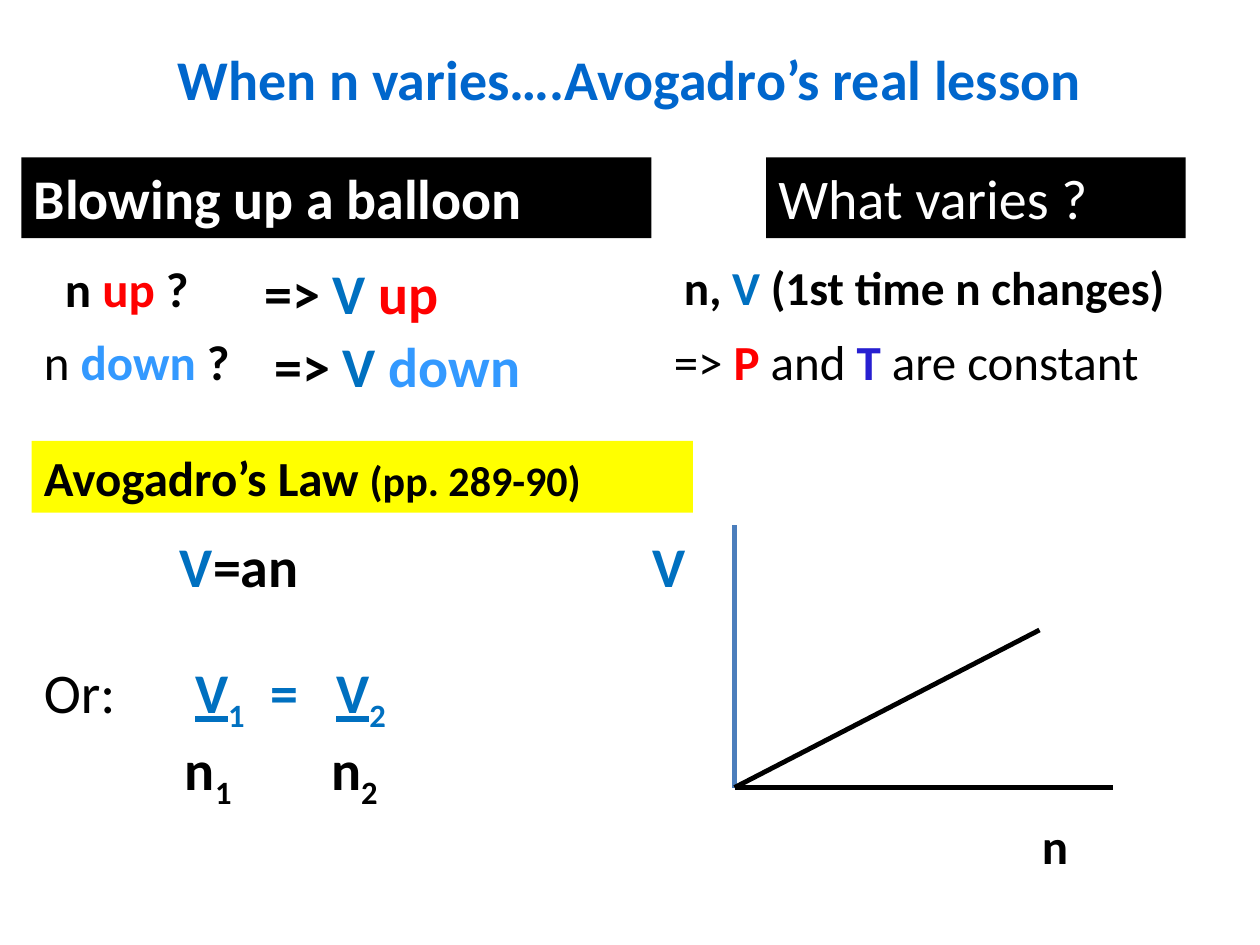
import pptx
import pptx.dml.color
import pptx.enum.shapes
import pptx.enum.text
import pptx.oxml.ns
import pptx.util
from lxml import etree

Inches = pptx.util.Inches
RGBColor = pptx.dml.color.RGBColor
qn = pptx.oxml.ns.qn

BLACK = RGBColor(0x00, 0x00, 0x00)
WHITE = RGBColor(0xFF, 0xFF, 0xFF)
YELLOW = RGBColor(0xFF, 0xFF, 0x00)
RED = RGBColor(0xFF, 0x00, 0x00)
TITLE_BLUE = RGBColor(0x00, 0x66, 0xCC)
VOLUME_BLUE = RGBColor(0x00, 0x70, 0xC0)
DOWN_BLUE = RGBColor(0x33, 0x99, 0xFF)
TEMPERATURE_BLUE = RGBColor(0x27, 0x1F, 0xD1)
AXIS_BLUE = RGBColor(0x4B, 0x7E, 0xBC)


class LessonSlide:
    font_name = "Calibri"

    def __init__(self, deck):
        self.page = deck.slides.add_slide(deck.slide_layouts[6])

    def add_spans(self, para, spans, size, color=BLACK, bold=True):
        para.font.name = self.font_name
        para.font.size = pptx.util.Pt(size)
        para.font.bold = bold
        para.font.color.rgb = color
        for words, style in spans:
            span = para.add_run()
            span.text = words
            if "color" in style:
                span.font.color.rgb = style["color"]
            if "bold" in style:
                span.font.bold = style["bold"]
            if "size" in style:
                span.font.size = pptx.util.Pt(style["size"])
            if "underline" in style:
                span.font.underline = style["underline"]
            if "baseline" in style:
                span.font._element.set("baseline", str(style["baseline"] * 1000))

    def text(self, left, top, width, height, spans, size, **style):
        box = self.page.shapes.add_textbox(
            Inches(left), Inches(top), Inches(width), Inches(height))
        box.text_frame.word_wrap = True
        para = box.text_frame.paragraphs[0]
        self.add_spans(para, spans, size, **style)
        return box

    def banner(self, left, top, width, height, fill, spans, size, **style):
        box = self.page.shapes.add_shape(
            pptx.enum.shapes.MSO_SHAPE.RECTANGLE,
            Inches(left), Inches(top), Inches(width), Inches(height))
        box.shadow.inherit = False
        box.fill.solid()
        box.fill.fore_color.rgb = fill
        box.line.fill.background()
        frame = box.text_frame
        frame.word_wrap = True
        frame.vertical_anchor = pptx.enum.text.MSO_ANCHOR.TOP
        para = frame.paragraphs[0]
        para.alignment = pptx.enum.text.PP_ALIGN.LEFT
        self.add_spans(para, spans, size, **style)

    def line(self, start, end, color, weight):
        connector = self.page.shapes.add_connector(
            pptx.enum.shapes.MSO_CONNECTOR.STRAIGHT,
            *(Inches(value) for value in start + end))
        connector.line.color.rgb = color
        connector.line.width = pptx.util.Pt(weight)
        etree.SubElement(connector._element.spPr, qn("a:effectLst"))

    def tab_stops(self, para, positions):
        stops = etree.Element(qn("a:tabLst"))
        for position in positions:
            etree.SubElement(stops, qn("a:tab"), pos=str(Inches(position)), algn="l")
        para._p.get_or_add_pPr().insert(0, stops)


def main():
    deck = pptx.Presentation()
    deck.slide_width = Inches(10)
    deck.slide_height = Inches(7.5)
    slide = LessonSlide(deck)

    volume = {"color": VOLUME_BLUE}
    up = ("up", {"color": RED})
    plain = {"bold": False}
    title = slide.text(0.5, 0.3, 9, 1.25, [("When n varies….Avogadro’s real lesson", {})],
                       32, color=TITLE_BLUE)
    title.text_frame.paragraphs[0].alignment = pptx.enum.text.PP_ALIGN.CENTER

    slide.banner(0.17, 1.25, 5, 0.64, BLACK, [("Blowing up a balloon", {})], 32, color=WHITE)
    slide.banner(6.08, 1.25, 3.33, 0.64, BLACK, [("What varies ?", {})], 32,
                 color=WHITE, bold=False)
    slide.banner(0.25, 3.5, 5.25, 0.57, YELLOW,
                 [("Avogadro’s Law ", {}), ("(pp. 289-90)", {"size": 24})], 28)

    first_row, second_row = 2, 2.58
    slide.text(0.33, first_row, 1.67, 0.57, [(" n ", {}), up, (" ?", {})], 28)
    slide.text(2, first_row, 1.92, 0.64, [("=> ", {}), ("V ", volume), up], 32)
    slide.text(5.33, first_row, 4.67, 0.56,
               [("n, ", {}), ("V", volume), (" (1st time n changes)", {})], 27)
    slide.text(0.25, second_row, 1.92, 0.57,
               [("n ", plain), ("down ", {"color": DOWN_BLUE}), ("?", {})], 28)
    slide.text(2.08, second_row, 2.83, 0.64,
               [("=> ", {}), ("V ", volume), ("down", {"color": DOWN_BLUE})], 32)
    slide.text(5.25, second_row, 4.5, 0.57,
               [("=> ", plain), ("P", {"color": RED}), (" and ", plain),
                ("T ", {"color": TEMPERATURE_BLUE}), ("are constant", plain)], 28)

    slide.text(1.33, 4.17, 2, 0.64, [("V", volume), ("=an", {})], 32)
    numerator = {"underline": True}
    subscript = {"baseline": -25}
    equation = slide.text(
        0.25, 5.17, 4.5, 1.54,
        [("Or:\t", {"color": BLACK, "bold": False}), ("V", numerator), ("1", subscript),
         ("\t=\t", {}), ("V", numerator), ("2", subscript)], 32, color=VOLUME_BLUE)
    ratio = equation.text_frame.paragraphs[0]
    slide.tab_stops(ratio, [1.2, 1.8, 2.32])
    denominators = equation.text_frame.add_paragraph()
    slide.add_spans(denominators,
                    [("\tn", {}), ("1", subscript), ("\tn", {}), ("2", subscript)], 32)
    slide.tab_stops(denominators, [1.12, 2.28])

    origin = (5.83, 6.25)
    slide.line((5.83, 4.17), origin, AXIS_BLUE, 3)
    slide.line(origin, (8.83, 6.25), BLACK, 2.75)
    slide.line(origin, (8.25, 5), BLACK, 2.75)
    slide.text(5.08, 4.17, 0.42, 0.64, [("V", {})], 32, color=VOLUME_BLUE)
    slide.text(8.17, 6.42, 0.75, 0.57, [("n", {})], 28)

    deck.save("out.pptx")


if __name__ == "__main__":
    main()
